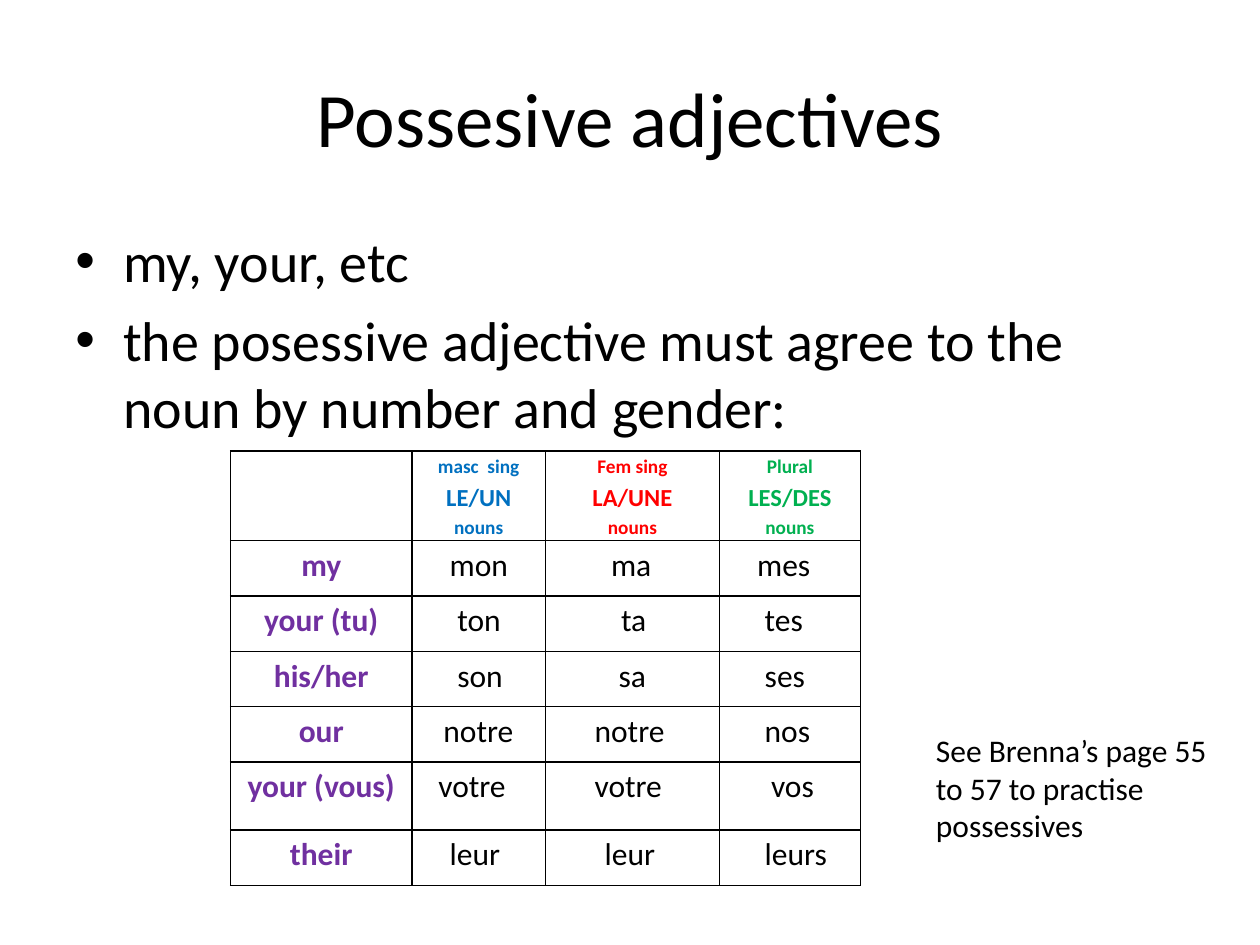
import pptx
import pptx.util
import pptx.oxml
import pptx.oxml.ns
import pptx.dml.color
import pptx.enum.text
from lxml import etree

Inches, Pt = pptx.util.Inches, pptx.util.Pt
Align = pptx.enum.text.PP_ALIGN
Anchor = pptx.enum.text.MSO_ANCHOR
qn = pptx.oxml.ns.qn

# Content
COLORS = {"ink": "000000", "masc": "0070C0", "fem": "FF0000",
          "plural": "00B050", "owner": "7030A0"}
TITLE = "Possesive adjectives"
POINTS = ["my, your, etc",
          "the posessive adjective must agree to the noun by number and gender:"]
NOTE = "See Brenna’s page 55 to 57 to practise possessives"
HEADS = [("masc", ["masc  sing", "LE/UN", "nouns"]),
         ("fem", ["Fem sing", "LA/UNE", "nouns"]),
         ("plural", ["Plural", "LES/DES", "nouns"])]
# Each form comes with its indent in inches
ROWS = [("my", [("mon", 0.23), ("ma", 0.45), ("mes", 0.23)]),
        ("your (tu)", [("ton", 0.29), ("ta", 0.53), ("tes", 0.29)]),
        ("his/her", [("son", 0.29), ("sa", 0.51), ("ses", 0.29)]),
        ("our", [("notre", 0.18), ("notre", 0.32), ("nos", 0.29)]),
        ("your (vous)", [("votre", 0.14), ("votre", 0.32), ("vos", 0.34)]),
        ("their", [("leur", 0.23), ("leur", 0.4), ("leurs", 0.29)])]
WIDTHS = [1.44, 1.06, 1.38, 1.12]
HEIGHTS = [0.71, 0.44, 0.44, 0.44, 0.44, 0.54, 0.44]


def add_run(para, text, size, color="ink", bold=False):
    run = para.add_run()
    run.text = text
    font = run.font
    font.name, font.size, font.bold = "Calibri", Pt(size), bold
    font.color.rgb = pptx.dml.color.RGBColor.from_string(COLORS[color])


def add_box(slide, left, top, width, height):
    box = slide.shapes.add_textbox(*map(Inches, (left, top, width, height)))
    box.text_frame.word_wrap = True
    return box.text_frame


def next_para(frame, index):
    return frame.add_paragraph() if index else frame.paragraphs[0]


def set_bullet(para):
    props = para._p.get_or_add_pPr()
    props.set("marL", str(Inches(0.38)))
    props.set("indent", str(-Inches(0.38)))
    space = etree.SubElement(props, qn("a:spcBef"))
    etree.SubElement(space, qn("a:spcPct")).set("val", "20000")
    etree.SubElement(props, qn("a:buFont")).set("typeface", "Arial")
    etree.SubElement(props, qn("a:buChar")).set("char", "•")


def style_cell(cell):
    cell.margin_left = cell.margin_right = Inches(0.07)
    cell.margin_top = cell.margin_bottom = 0
    cell.fill.background()
    props = cell._tc.get_or_add_tcPr()
    for spot, side in enumerate(("lnL", "lnR", "lnT", "lnB")):
        line = etree.Element(qn("a:" + side), w=str(Pt(1)))
        fill = etree.SubElement(line, qn("a:solidFill"))
        etree.SubElement(fill, qn("a:srgbClr")).set("val", COLORS["ink"])
        props.insert(spot, line)


def fill_cell(cell, lines, color="ink", bold=False, indent=None):
    for i, (text, size) in enumerate(lines):
        para = next_para(cell.text_frame, i)
        para.line_spacing = 1.15
        if indent is None:
            para.alignment = Align.CENTER
        else:
            para._p.get_or_add_pPr().set("marL", str(Inches(indent)))
        add_run(para, text, size, color, bold)


def add_grid(slide):
    frame = slide.shapes.add_table(
        len(HEIGHTS), len(WIDTHS), Inches(1.83), Inches(3.58),
        Inches(sum(WIDTHS)), Inches(sum(HEIGHTS)))
    table = frame.table
    table.first_row = table.horz_banding = False
    for col, width in zip(table.columns, WIDTHS):
        col.width = Inches(width)
    for row, height in zip(table.rows, HEIGHTS):
        row.height = Inches(height)
    for cell in table.iter_cells():
        style_cell(cell)

    for c, (color, lines) in enumerate(HEADS, 1):
        fill_cell(table.cell(0, c), list(zip(lines, (11, 14, 11))), color, True)
    for r, (owner, forms) in enumerate(ROWS, 1):
        fill_cell(table.cell(r, 0), [(owner, 18)], "owner", True)
        for c, (form, indent) in enumerate(forms, 1):
            fill_cell(table.cell(r, c), [(form, 18)], indent=indent)


def main():
    deck = pptx.Presentation()
    deck.slide_width, deck.slide_height = Inches(10), Inches(7.5)
    slide = deck.slides.add_slide(deck.slide_layouts[6])

    # Title
    frame = add_box(slide, 0.5, 0.3, 9, 1.25)
    frame.vertical_anchor = Anchor.MIDDLE
    frame.paragraphs[0].alignment = Align.CENTER
    add_run(frame.paragraphs[0], TITLE, 44)

    # Bullet points
    frame = add_box(slide, 0.5, 1.75, 9, 4.95)
    for i, point in enumerate(POINTS):
        para = next_para(frame, i)
        set_bullet(para)
        add_run(para, point, 32)

    # Table of possessives
    add_grid(slide)

    # Practice note
    frame = add_box(slide, 7.33, 5.75, 2.58, 1.01)
    add_run(frame.paragraphs[0], NOTE, 18)

    deck.save("out.pptx")


if __name__ == "__main__":
    main()
